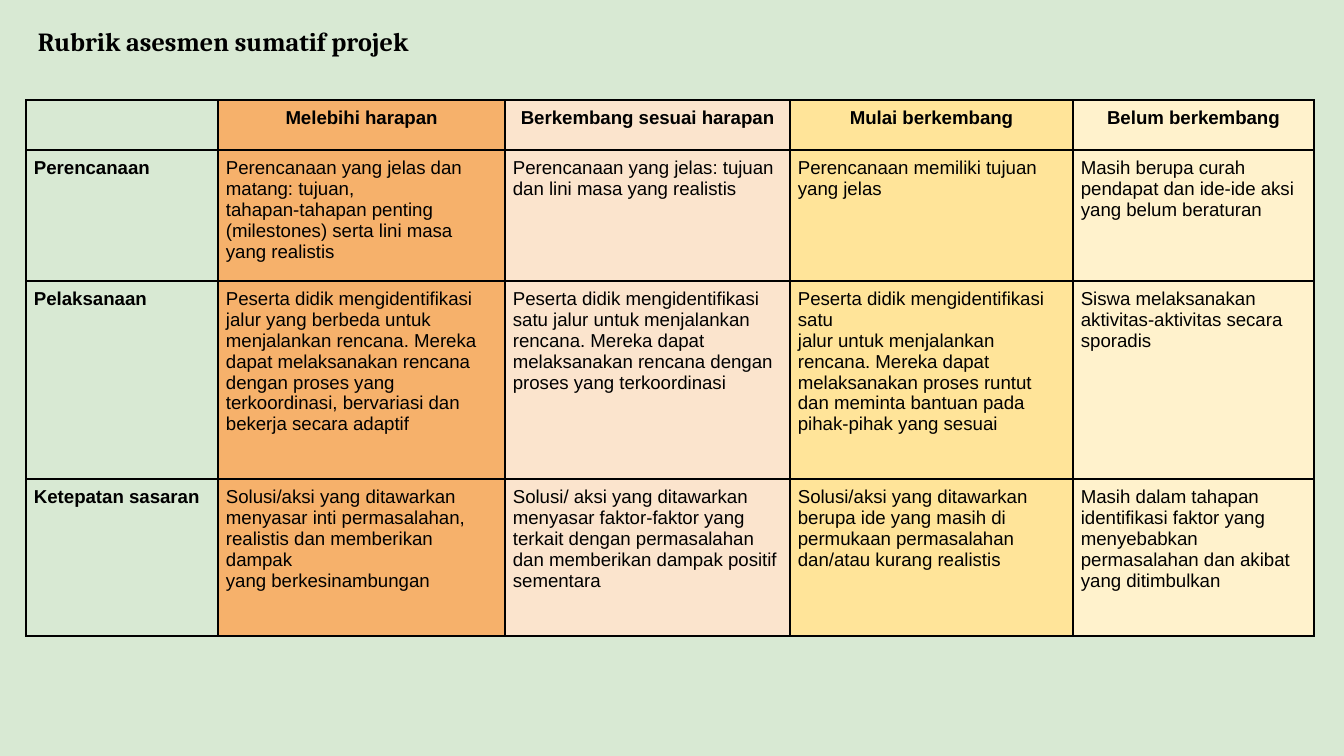
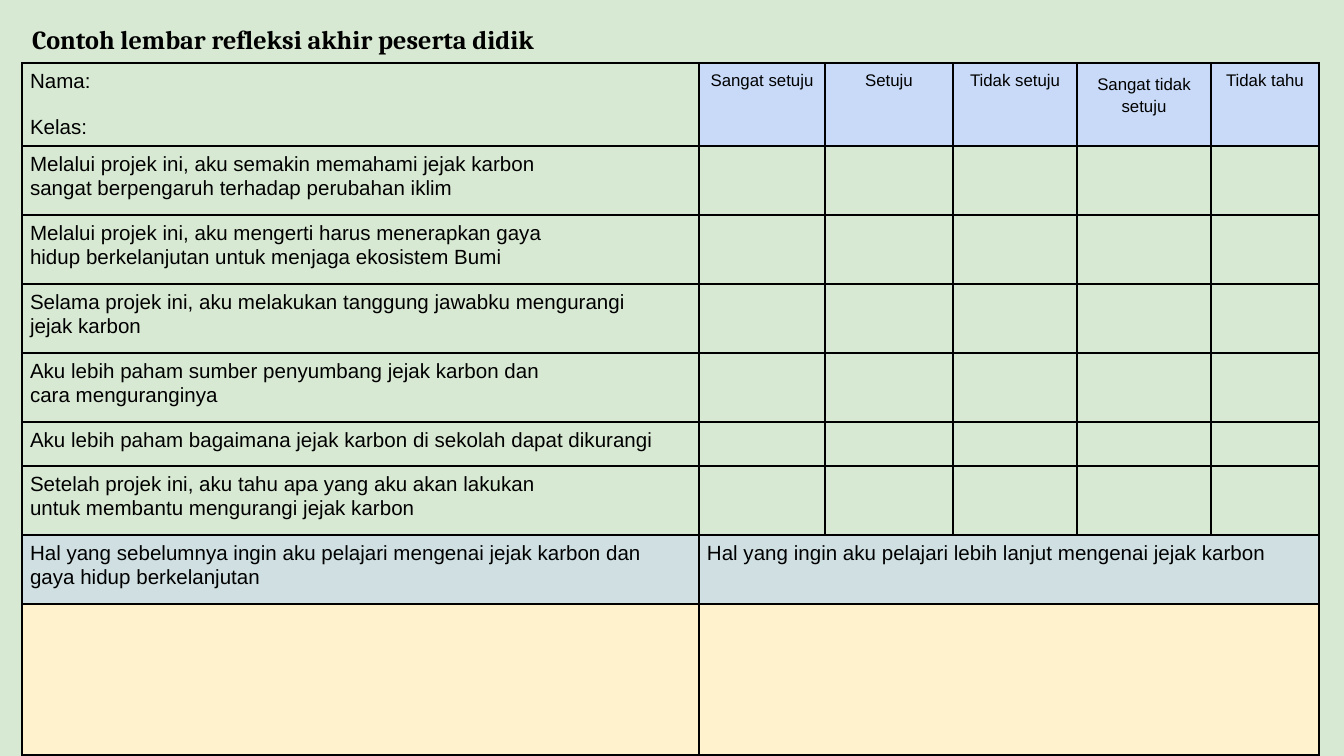
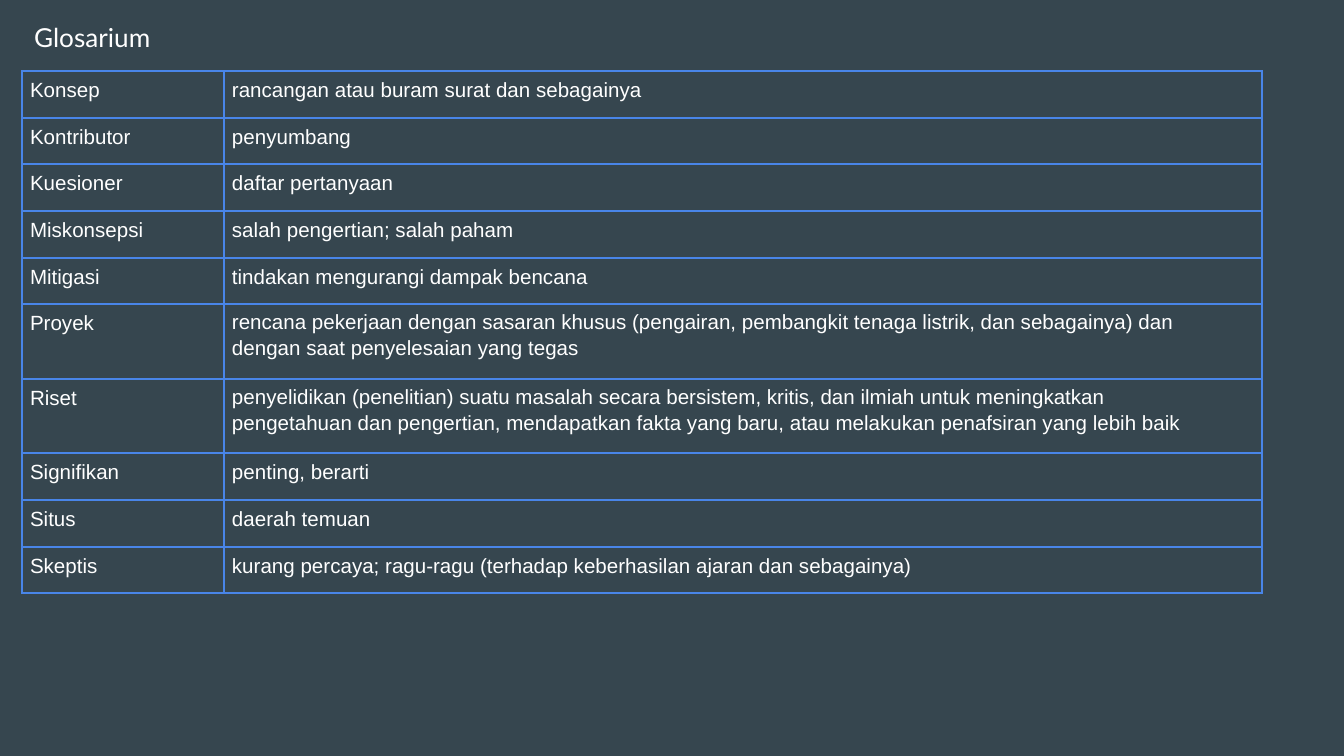
from lxml.etree import SubElement
from pptx import Presentation
from pptx.dml.color import RGBColor
from pptx.enum.text import MSO_ANCHOR as Anchor, MSO_AUTO_SIZE as AutoSize, PP_ALIGN as Align
from pptx.oxml import parse_xml
from pptx.oxml.ns import nsdecls, qn
from pptx.util import Emu, Pt

EMU_PER_PX = 914400 / 134.4
TITLE_ONLY = 5
BLACK, WHITE = "000000", "FFFFFF"
GREEN, SLATE, BLUE = "D8E9D3", "36464F", "4985E8"
CREAM, ANSWER_BLUE, QUESTION_BLUE = "FFF2CC", "C8DAF7", "CFDFE2"
LEVEL_FILLS = [GREEN, "F6B16B", "FBE4CD", "FFE499", CREAM]

RUBRIC = [
    ["", "Melebihi harapan", "Berkembang sesuai harapan", "Mulai berkembang", "Belum berkembang"],
    ["Perencanaan",
     "Perencanaan yang jelas dan matang: tujuan,\n"
     "tahapan-tahapan penting (milestones) serta lini masa yang realistis",
     "Perencanaan yang jelas: tujuan dan lini masa yang realistis",
     "Perencanaan memiliki tujuan yang jelas",
     "Masih berupa curah\vpendapat dan ide-ide aksi yang belum beraturan"],
    ["Pelaksanaan",
     "Peserta didik mengidentifikasi jalur yang berbeda untuk menjalankan rencana. Mereka dapat "
     "melaksanakan rencana dengan proses yang terkoordinasi, bervariasi dan bekerja secara adaptif",
     "Peserta didik mengidentifikasi satu jalur untuk menjalankan rencana. Mereka dapat "
     "melaksanakan rencana dengan proses yang terkoordinasi",
     "Peserta didik mengidentifikasi satu\n"
     "jalur untuk menjalankan rencana. Mereka dapat melaksanakan proses runtut "
     "dan meminta bantuan pada pihak-pihak yang sesuai",
     "Siswa melaksanakan aktivitas-aktivitas secara sporadis"],
    ["Ketepatan sasaran",
     "Solusi/aksi yang ditawarkan menyasar inti permasalahan, realistis dan memberikan dampak\n"
     "yang berkesinambungan",
     "Solusi/ aksi yang ditawarkan menyasar faktor-faktor yang terkait dengan permasalahan "
     "dan memberikan dampak positif sementara",
     "Solusi/aksi yang ditawarkan berupa ide yang masih di permukaan permasalahan "
     "dan/atau kurang realistis",
     "Masih dalam tahapan identifikasi faktor yang menyebabkan permasalahan "
     "dan akibat yang ditimbulkan"],
]
ANSWERS = ["Sangat setuju", "Setuju", "Tidak setuju", "Sangat tidak setuju", "Tidak tahu"]
STATEMENTS = [
    "Melalui projek ini, aku semakin memahami jejak karbon\v"
    "sangat berpengaruh terhadap perubahan iklim",
    "Melalui projek ini, aku mengerti harus menerapkan gaya\v"
    "hidup berkelanjutan untuk menjaga ekosistem Bumi",
    "Selama projek ini, aku melakukan tanggung jawabku mengurangi\vjejak karbon",
    "Aku lebih paham sumber penyumbang jejak karbon dan\vcara menguranginya",
    "Aku lebih paham bagaimana jejak karbon di sekolah dapat dikurangi",
    "Setelah projek ini, aku tahu apa yang aku akan lakukan\v"
    "untuk membantu mengurangi jejak karbon",
]
QUESTIONS = [
    "Hal yang sebelumnya ingin aku pelajari mengenai jejak karbon dan\vgaya hidup berkelanjutan",
    "Hal yang ingin aku pelajari lebih lanjut mengenai jejak karbon",
]
GLOSSARY = [
    ("Konsep", "rancangan atau buram surat dan sebagainya"),
    ("Kontributor", "penyumbang"),
    ("Kuesioner", "daftar pertanyaan"),
    ("Miskonsepsi", "salah pengertian; salah paham"),
    ("Mitigasi", "tindakan mengurangi dampak bencana"),
    ("Proyek", "rencana pekerjaan dengan sasaran khusus (pengairan, pembangkit tenaga listrik, "
               "dan sebagainya) dan\vdengan saat penyelesaian yang tegas"),
    ("Riset", "penyelidikan (penelitian) suatu masalah secara bersistem, kritis, dan ilmiah untuk "
              "meningkatkan\vpengetahuan dan pengertian, mendapatkan fakta yang baru, "
              "atau melakukan penafsiran yang lebih baik"),
    ("Signifikan", "penting, berarti"),
    ("Situs", "daerah temuan"),
    ("Skeptis", "kurang percaya; ragu-ragu (terhadap keberhasilan ajaran dan sebagainya)"),
]


def px(length):
    return Emu(round(length * EMU_PER_PX))


def rgb(color):
    return RGBColor.from_string(color)


def write(frame, text, size=11, font="Arial", color=BLACK, bold=False, align=Align.LEFT,
          spacing=1.0, gap=0):
    """Fill a text frame; gap is the space in points between paragraphs."""
    for index, line in enumerate(text.split("\n")):
        paragraph = frame.add_paragraph() if index else frame.paragraphs[0]
        paragraph.text = line
        paragraph.alignment = align
        paragraph.line_spacing = spacing
        paragraph.space_before = Pt(gap if index else 0)
        for run in paragraph.runs:
            run.font.size = Pt(size)
            run.font.name = font
            run.font.bold = bold
            run.font.color.rgb = rgb(color)


def write_cell(cell, text, left=8, top=8, right=0, **text_format):
    cell.margin_left, cell.margin_top, cell.margin_right = px(left), px(top), px(right)
    write(cell.text_frame, text, **text_format)


def add_titled_slide(presentation, title, box, background, **text_format):
    slide = presentation.slides.add_slide(presentation.slide_layouts[TITLE_ONLY])
    slide.background.fill.solid()
    slide.background.fill.fore_color.rgb = rgb(background)
    shape = slide.shapes.title
    shape.left, shape.top, shape.width, shape.height = map(px, box)
    frame = shape.text_frame
    frame.word_wrap = True
    frame.auto_size = AutoSize.NONE
    frame.vertical_anchor = Anchor.TOP
    frame.margin_left = frame.margin_top = px(1)
    frame.margin_right = frame.margin_bottom = 0
    write(frame, title, size=14, **text_format)
    return slide


def add_borders(cell, color):
    properties = cell._tc.get_or_add_tcPr()
    for index, side in enumerate("LRTB"):
        line = parse_xml(f'<a:ln{side} {nsdecls("a")} w="12700"/>')
        fill = SubElement(line, qn("a:solidFill"))
        SubElement(fill, qn("a:srgbClr"), val=color)
        properties.insert(index, line)


def add_grid(slide, left, top, widths, heights, border, fill_at):
    """Add a bordered table whose cell colours come from fill_at(row, column)."""
    table = slide.shapes.add_table(len(heights), len(widths), px(left), px(top),
                                   px(sum(widths)), px(sum(heights))).table
    table.first_row = table.horz_banding = False
    for column, width in zip(table.columns, widths):
        column.width = px(width)
    for row_index, (row, height) in enumerate(zip(table.rows, heights)):
        row.height = px(height)
        for column_index, cell in enumerate(row.cells):
            cell.margin_left = cell.margin_top = cell.margin_right = cell.margin_bottom = 0
            cell.fill.solid()
            cell.fill.fore_color.rgb = rgb(fill_at(row_index, column_index))
            add_borders(cell, border)
    return table


def build_rubric(presentation):
    slide = add_titled_slide(presentation, "Rubrik asesmen sumatif projek", (37, 24, 379, 35),
                             GREEN, font="Cambria", bold=True)
    table = add_grid(slide, 26, 100, [192, 287, 285, 283, 241], [50, 131, 198, 157], BLACK,
                     lambda row, column: LEVEL_FILLS[column])
    for row, texts in enumerate(RUBRIC):
        for column, text in enumerate(texts):
            cell = table.cell(row, column)
            if row == 0:
                write_cell(cell, text, left=0, size=10, bold=True, align=Align.CENTER)
            else:
                write_cell(cell, text, right=10, size=10, bold=column == 0)


def build_reflection(presentation):
    slide = add_titled_slide(presentation, "Contoh lembar refleksi akhir peserta didik",
                             (31, 22, 515, 35), GREEN, font="Cambria", bold=True)
    question_row = len(STATEMENTS) + 1

    def fill_at(row, column):
        if row == 0 and column:
            return ANSWER_BLUE
        return {question_row: QUESTION_BLUE, question_row + 1: CREAM}.get(row, GREEN)

    statement_heights = [69 if "\v" in statement else 44 for statement in STATEMENTS]
    table = add_grid(slide, 22, 63, [677, 126, 128, 124, 134, 108],
                     [83, *statement_heights, 69, 151], BLACK, fill_at)
    for row in (question_row, question_row + 1):
        table.cell(row, 1).merge(table.cell(row, len(ANSWERS)))

    write_cell(table.cell(0, 0), "Nama:\nKelas:", top=7, spacing=1.02, gap=12)
    for column, answer in enumerate(ANSWERS, 1):
        wrapped = answer == "Sangat tidak setuju"
        write_cell(table.cell(0, column), answer, left=0, top=9 if wrapped else 8, size=9,
                   align=Align.CENTER, spacing=1.17 if wrapped else 1.0)
    for row, statement in enumerate(STATEMENTS, 1):
        write_cell(table.cell(row, 0), statement, top=7, spacing=1.02)
    for column, question in enumerate(QUESTIONS):
        write_cell(table.cell(question_row, column), question, top=7, spacing=1.02)


def build_glossary(presentation):
    slide = add_titled_slide(presentation, "Glosarium", (33, 20, 125, 35), SLATE,
                             font="Lato", color=WHITE)
    table = add_grid(slide, 22, 71, [202, 1038], [47, 46, 47, 47, 46, 75, 74, 47, 47, 46], BLUE,
                     lambda row, column: SLATE)
    for row, (term, meaning) in enumerate(GLOSSARY):
        wrapped = "\v" in meaning
        write_cell(table.cell(row, 0), term, color=WHITE)
        write_cell(table.cell(row, 1), meaning, top=4 if wrapped else 8, color=WHITE,
                   spacing=1.14 if wrapped else 1.0)


def main():
    presentation = Presentation()
    presentation.slide_width, presentation.slide_height = px(1344), px(756)
    build_rubric(presentation)
    build_reflection(presentation)
    build_glossary(presentation)
    presentation.save("out.pptx")


if __name__ == "__main__":
    main()
